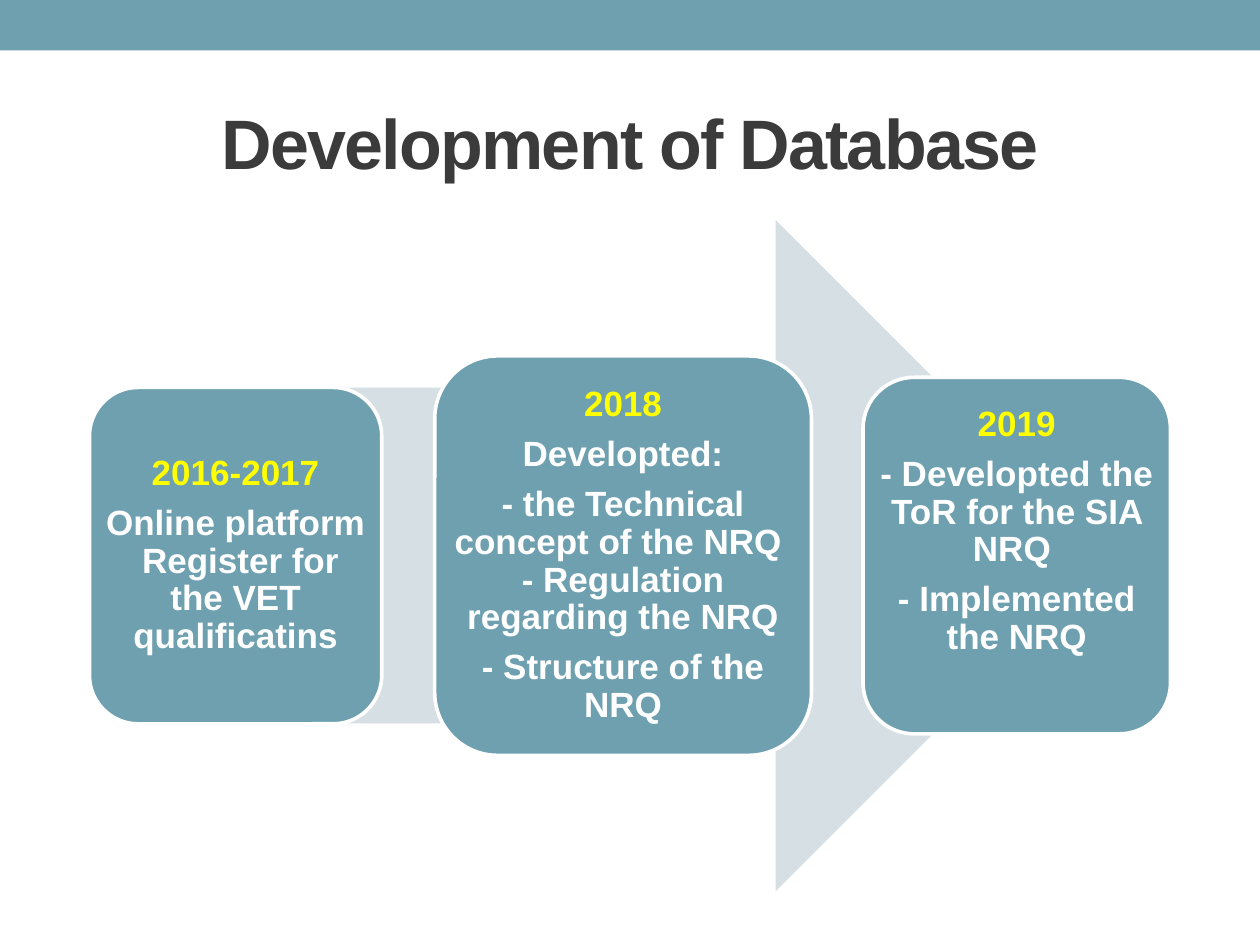
from pptx import Presentation
from pptx.dml.color import RGBColor
from pptx.enum.shapes import MSO_SHAPE as Shape
from pptx.enum.text import MSO_ANCHOR as Anchor, PP_ALIGN as Align
from pptx.util import Inches, Pt

TEAL = RGBColor(0x6E, 0xA0, 0xB0)
PALE = RGBColor(0xD5, 0xDF, 0xE4)
DARK = RGBColor(0x3B, 0x3B, 0x3B)
YELLOW = RGBColor(0xFF, 0xFF, 0x00)
WHITE = RGBColor(0xFF, 0xFF, 0xFF)

TITLE = "Development of Database"
STAGES = [
    {"left": 0.71, "width": 2.32, "height": 2.67, "bottom": 0, "year": "2016-2017",
     "steps": ["Online platform  Register for the VET qualificatins"]},
    {"left": 3.45, "width": 2.99, "height": 3.17, "bottom": 0, "year": "2018",
     "steps": ["Developted:",
               "- the Technical concept of the NRQ \n- Regulation regarding the NRQ",
               "- Structure of the NRQ"]},
    {"left": 6.85, "width": 2.44, "height": 2.83, "bottom": 0.38, "year": "2019",
     "steps": ["- Developted the ToR for the SIA NRQ ", "- Implemented the NRQ"]},
]
MIDDLE = 4.41
ARROW_HEIGHT = 5.33


def add_block(slide, kind, left, top, width, height, fill, line=None):
    shape = slide.shapes.add_shape(
        kind, Inches(left), Inches(top), Inches(width), Inches(height))
    shape.shadow.inherit = False
    shape.fill.solid()
    shape.fill.fore_color.rgb = fill
    if line is None:
        shape.line.fill.background()
    else:
        shape.line.color.rgb = line
        shape.line.width = Pt(2.08)
    return shape


def write(paragraph, text, size=20, color=WHITE, line_spacing=0.9, after=7, tracking=None):
    paragraph.text = text
    paragraph.alignment = Align.CENTER
    paragraph.line_spacing = line_spacing
    paragraph.space_after = Pt(after)
    for run in paragraph.runs:
        run.font.name = "Arial"
        run.font.size = Pt(size)
        run.font.bold = True
        run.font.color.rgb = color
        if tracking is not None:
            run._r.get_or_add_rPr().set("spc", str(tracking))


def add_stage(slide, stage):
    shape = add_block(slide, Shape.ROUNDED_RECTANGLE, stage["left"],
                      MIDDLE - stage["height"] / 2, stage["width"], stage["height"],
                      TEAL, line=WHITE)
    frame = shape.text_frame
    frame.word_wrap = True
    frame.vertical_anchor = Anchor.MIDDLE
    frame.margin_left = frame.margin_right = frame.margin_top = 0
    frame.margin_bottom = Inches(stage["bottom"])
    write(frame.paragraphs[0], stage["year"], color=YELLOW)
    for step in stage["steps"]:
        write(frame.add_paragraph(), step)


def main():
    presentation = Presentation()
    presentation.slide_width = Inches(10)
    presentation.slide_height = Inches(7.5)
    slide = presentation.slides.add_slide(presentation.slide_layouts[6])

    add_block(slide, Shape.RECTANGLE, 0, 0, 10, 0.4, TEAL)
    title = slide.shapes.add_textbox(Inches(0.5), Inches(0.58), Inches(9), Inches(1.08))
    title.text_frame.word_wrap = True
    title.text_frame.vertical_anchor = Anchor.MIDDLE
    write(title.text_frame.paragraphs[0], TITLE, size=40, color=DARK,
          line_spacing=1.0, after=0, tracking=-100)

    add_block(slide, Shape.RIGHT_ARROW, 1.17, MIDDLE - ARROW_HEIGHT / 2, 7.65,
              ARROW_HEIGHT, PALE)
    for stage in STAGES:
        add_stage(slide, stage)
    presentation.save("out.pptx")


if __name__ == "__main__":
    main()
